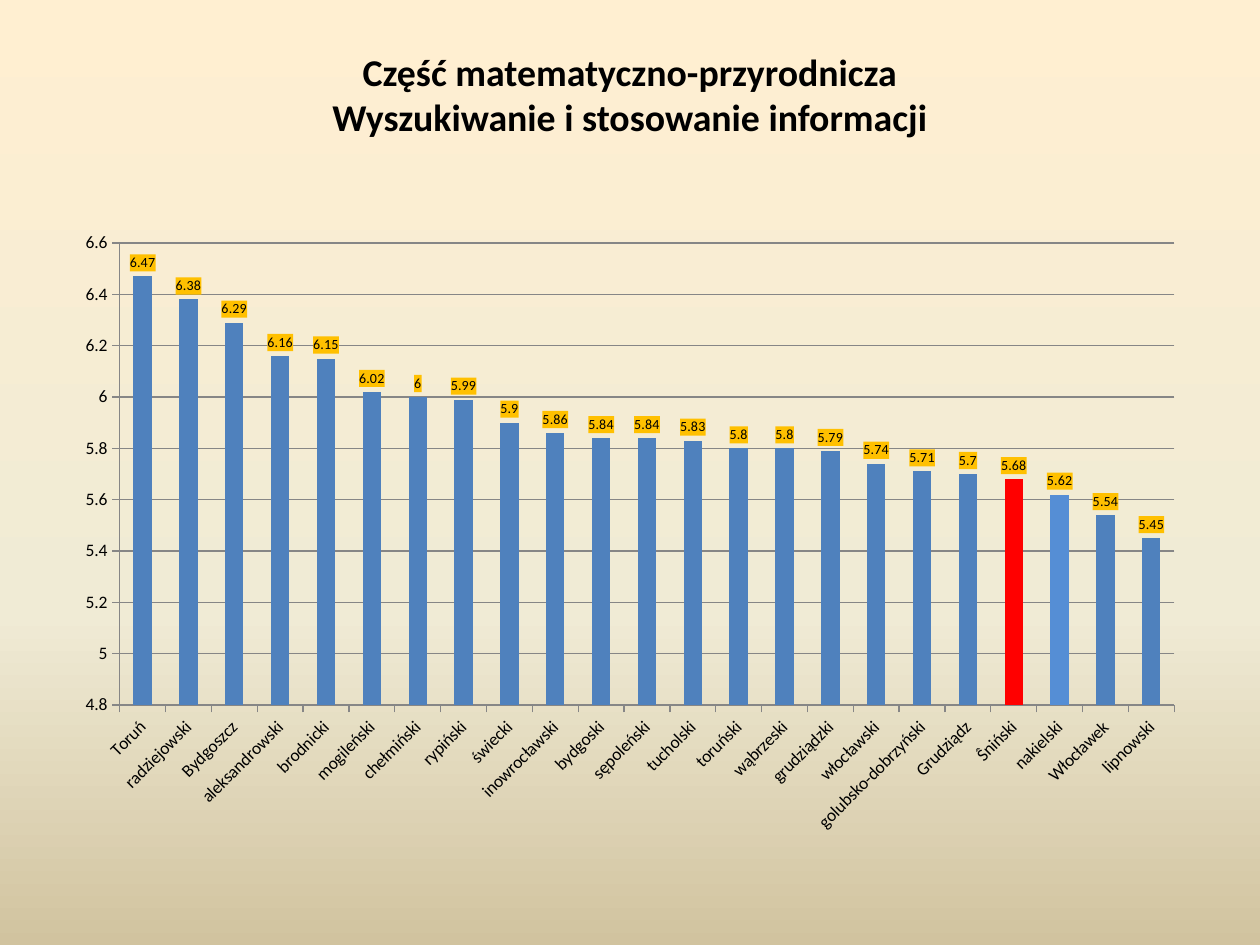
from copy import deepcopy

from lxml import etree
from pptx import Presentation
from pptx.chart.data import CategoryChartData
from pptx.dml.color import RGBColor
from pptx.enum.chart import XL_CHART_TYPE, XL_LABEL_POSITION, XL_TICK_MARK
from pptx.enum.text import MSO_ANCHOR, PP_ALIGN
from pptx.oxml.ns import qn
from pptx.util import Cm, Pt

COLUMN = XL_CHART_TYPE.COLUMN_CLUSTERED
ABOVE = XL_LABEL_POSITION.OUTSIDE_END
OUT, NONE = XL_TICK_MARK.OUTSIDE, XL_TICK_MARK.NONE
MIDDLE, CENTER = MSO_ANCHOR.MIDDLE, PP_ALIGN.CENTER

TITLE = ["Część matematyczno-przyrodnicza", "Wyszukiwanie i stosowanie informacji"]
SCORES = [
    ("Toruń", 6.47), ("radziejowski", 6.38), ("Bydgoszcz", 6.29),
    ("aleksandrowski", 6.16), ("brodnicki", 6.15), ("mogileński", 6.02),
    ("chełmiński", 6), ("rypiński", 5.99), ("świecki", 5.9),
    ("inowrocławski", 5.86), ("bydgoski", 5.84), ("sępoleński", 5.84),
    ("tucholski", 5.83), ("toruński", 5.8), ("wąbrzeski", 5.8),
    ("grudziądzki", 5.79), ("włocławski", 5.74), ("golubsko-dobrzyński", 5.71),
    ("Grudziądz", 5.7), ("Ŝniński", 5.68), ("nakielski", 5.62),
    ("Włocławek", 5.54), ("lipnowski", 5.45),
]
MARKED = {"Ŝniński": "FF0000", "nakielski": "558ED5"}
THEME = {
    "font": "Calibri", "text": "000000", "bar": "4F81BD", "line": "868686",
    "label": "FFC000", "title_size": 21.6, "axis_size": 10, "label_size": 8,
    "back": [(0, "FFEFD1"), (0.65, "F0EBD5"), (1, "D1C39F")],
}


def rgb(code):
    return RGBColor.from_string(code)


def style(font, size, bold=False):
    font.name, font.size, font.bold = THEME["font"], Pt(size), bold
    font.color.rgb = rgb(THEME["text"])


def paint(fill, code):
    fill.solid()
    fill.fore_color.rgb = rgb(code)


def rule(line):
    line.color.rgb = rgb(THEME["line"])
    line.width = Pt(0.75)


def add_back(slide):
    fill = slide.background.fill
    fill.gradient()
    fill.gradient_angle = 270
    stops = slide._element.find(".//" + qn("a:gsLst"))
    stops.append(deepcopy(stops[0]))
    for stop, (place, code) in zip(fill.gradient_stops, THEME["back"]):
        stop.position = place
        stop.color.rgb = rgb(code)


def add_title(slide):
    title = slide.shapes.title
    title.left, title.top, title.width, title.height = Cm(1.27), Cm(0.76), Cm(22.86), Cm(3.18)
    frame = title.text_frame
    frame.text = "\v".join(TITLE)
    frame.vertical_anchor = MIDDLE
    frame.margin_bottom = Cm(1.04)
    para = frame.paragraphs[0]
    para.alignment = CENTER
    style(para.font, THEME["title_size"], True)


def add_labels(plot):
    plot.has_data_labels = True
    labels = plot.data_labels
    style(labels.font, THEME["label_size"])
    labels.show_value = True
    labels.position = ABOVE
    box = etree.Element(qn("c:spPr"))
    fill = etree.SubElement(box, qn("a:solidFill"))
    etree.SubElement(fill, qn("a:srgbClr"), val=THEME["label"])
    labels._element.find(qn("c:txPr")).addprevious(box)


def add_scores(slide):
    data = CategoryChartData()
    data.categories = [name for name, _ in SCORES]
    data.add_series("Series 1", [score for _, score in SCORES])
    chart = slide.shapes.add_chart(
        COLUMN, Cm(1.27), Cm(4.45), Cm(22.86), Cm(12.57), data).chart
    chart.has_legend = chart.has_title = False
    style(chart.font, THEME["axis_size"])

    plot = chart.plots[0]
    plot.gap_width = 150
    plot.vary_by_categories = False
    bars = plot.series[0]
    paint(bars.format.fill, THEME["bar"])
    for i, (name, _) in enumerate(SCORES):
        if name in MARKED:
            paint(bars.points[i].format.fill, MARKED[name])
    add_labels(plot)

    names, values = chart.category_axis, chart.value_axis
    for axis in (names, values):
        axis.major_tick_mark, axis.minor_tick_mark = OUT, NONE
        rule(axis.format.line)
        style(axis.tick_labels.font, THEME["axis_size"])
    names._element.find(".//" + qn("a:bodyPr")).set("rot", "-2700000")
    values.minimum_scale, values.maximum_scale, values.major_unit = 4.8, 6.6, 0.2
    values.has_major_gridlines = True
    rule(values.major_gridlines.format.line)


def main():
    deck = Presentation()
    deck.slide_width, deck.slide_height = Cm(25.4), Cm(19.05)
    slide = deck.slides.add_slide(deck.slide_layouts[5])
    add_back(slide)
    add_title(slide)
    add_scores(slide)
    deck.save("out.pptx")


if __name__ == "__main__":
    main()
